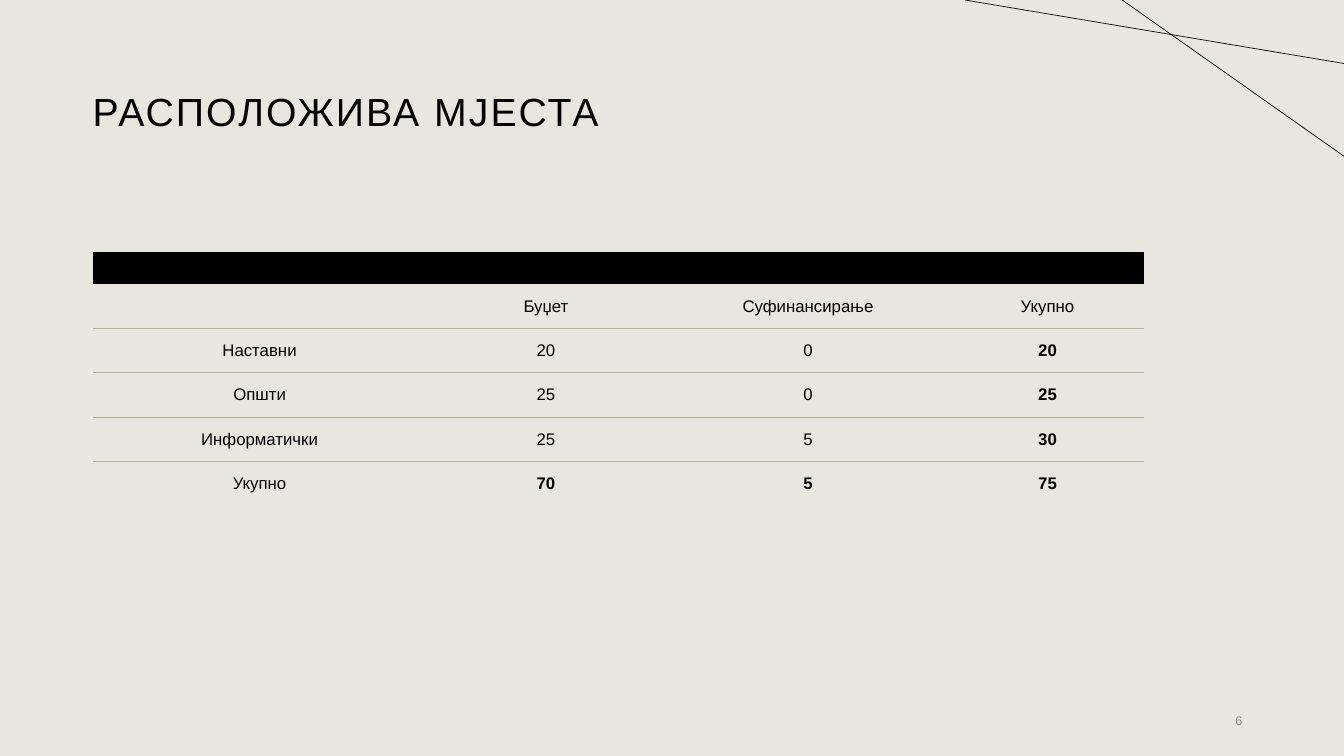
from lxml.etree import SubElement
from pptx import Presentation
from pptx.dml.color import RGBColor
from pptx.enum.shapes import MSO_CONNECTOR
from pptx.enum.text import MSO_ANCHOR, PP_ALIGN
from pptx.oxml.ns import qn
from pptx.util import Inches, Pt

COLORS = {"bg": "E9E6DF", "ink": "000000", "rule": "BBB19B", "muted": "8C8C8C"}
FONT = "Arial"
NO_STYLE = "{2D5ABB26-0587-4C30-8999-92F81FD0307C}"
COL_WIDTHS = [3.31, 2.37, 2.83, 1.92]
BAND_HEIGHT, ROW_HEIGHT = 0.32, 0.44
PLACES = [
    ["", "Буџет", "Суфинансирање", "Укупно"],
    ["Наставни", "20", "0", "20"],
    ["Општи", "25", "0", "25"],
    ["Информатички", "25", "5", "30"],
    ["Укупно", "70", "5", "75"],
]


def rgb(name):
    """Return the named palette colour."""
    return RGBColor.from_string(COLORS[name])


def add_run(p, text, size, color="ink", bold=False):
    """Add a formatted run to a paragraph."""
    r = p.add_run()
    r.text = text
    r.font.name, r.font.size, r.font.bold = FONT, Pt(size), bold
    r.font.color.rgb = rgb(color)
    return r


def add_text_frame(s, left, top, width, height):
    """Add a wrapping, vertically centred text box and return its frame."""
    sp = s.shapes.add_textbox(*map(Inches, (left, top, width, height)))
    tf = sp.text_frame
    tf.word_wrap = True
    tf.vertical_anchor = MSO_ANCHOR.MIDDLE
    return tf


def add_title(s, left, top, width, height, text):
    """Add the letter-spaced slide title."""
    tf = add_text_frame(s, left, top, width, height)
    tf.margin_left = 0
    p = tf.paragraphs[0]
    p.line_spacing = 0.9
    r = add_run(p, text, 28)
    r.font._element.set("spc", "150")


def add_slide_number(s, left, top, width, height, number):
    """Add the right-aligned slide number."""
    p = add_text_frame(s, left, top, width, height).paragraphs[0]
    p.alignment = PP_ALIGN.RIGHT
    add_run(p, number, 9, "muted")


def add_bottom_rule(cell):
    """Draw a thin rule under a table cell."""
    tc_pr = cell._tc.get_or_add_tcPr()
    ln = SubElement(tc_pr, qn("a:lnB"), w=str(Pt(1)))
    fill = SubElement(ln, qn("a:solidFill"))
    SubElement(fill, qn("a:srgbClr"), val=COLORS["rule"])
    tc_pr.insert(0, ln)


def add_places_table(s, left, top):
    """Add the table of places under a plain black band."""
    height = BAND_HEIGHT + ROW_HEIGHT * len(PLACES)
    frame = s.shapes.add_table(len(PLACES) + 1, len(COL_WIDTHS), Inches(left),
                               Inches(top), Inches(sum(COL_WIDTHS)), Inches(height))
    table = frame.table
    table.horz_banding = False
    table._tbl.tblPr.find(qn("a:tableStyleId")).text = NO_STYLE
    for col, width in zip(table.columns, COL_WIDTHS):
        col.width = Inches(width)
    for i, row in enumerate(table.rows):
        row.height = Inches(ROW_HEIGHT if i else BAND_HEIGHT)
    for cell in table.rows[0].cells:
        cell.margin_top = cell.margin_bottom = 0
        cell.fill.solid()
        cell.fill.fore_color.rgb = rgb("ink")
    last_row, last_col = len(PLACES), len(COL_WIDTHS) - 1
    for i, values in enumerate(PLACES, 1):
        for j, value in enumerate(values):
            cell = table.cell(i, j)
            cell.fill.background()
            cell.vertical_anchor = MSO_ANCHOR.MIDDLE
            if i < last_row:
                add_bottom_rule(cell)
            if value:
                p = cell.text_frame.paragraphs[0]
                p.alignment = PP_ALIGN.CENTER
                total = i > 1 and (j == last_col or (i == last_row and j > 0))
                add_run(p, value, 12, bold=total)


def add_corner_lines(s, right, ends):
    """Add lines from the top edge, each given as start x and end y, to the right edge."""
    for x, y in ends:
        line = s.shapes.add_connector(MSO_CONNECTOR.STRAIGHT, Inches(x), 0,
                                      Inches(right), Inches(y))
        line.line.color.rgb = rgb("ink")
        line.line.width = Pt(0.5)
        SubElement(line._element.spPr, qn("a:effectLst"))


def main():
    """Build and save the slide."""
    prs = Presentation()
    prs.slide_width, prs.slide_height = Inches(13.33), Inches(7.5)
    s = prs.slides.add_slide(prs.slide_layouts[6])
    s.background.fill.solid()
    s.background.fill.fore_color.rgb = rgb("bg")
    add_title(s, 0.92, 0.4, 11.5, 1.45, "РАСПОЛОЖИВА МЈЕСТА")
    add_places_table(s, 0.92, 2.5)
    add_slide_number(s, 9.42, 6.95, 3, 0.4, "6")
    add_corner_lines(s, 13.33, [(11.13, 1.55), (9.57, 0.63)])
    prs.save("out.pptx")


if __name__ == "__main__":
    main()
